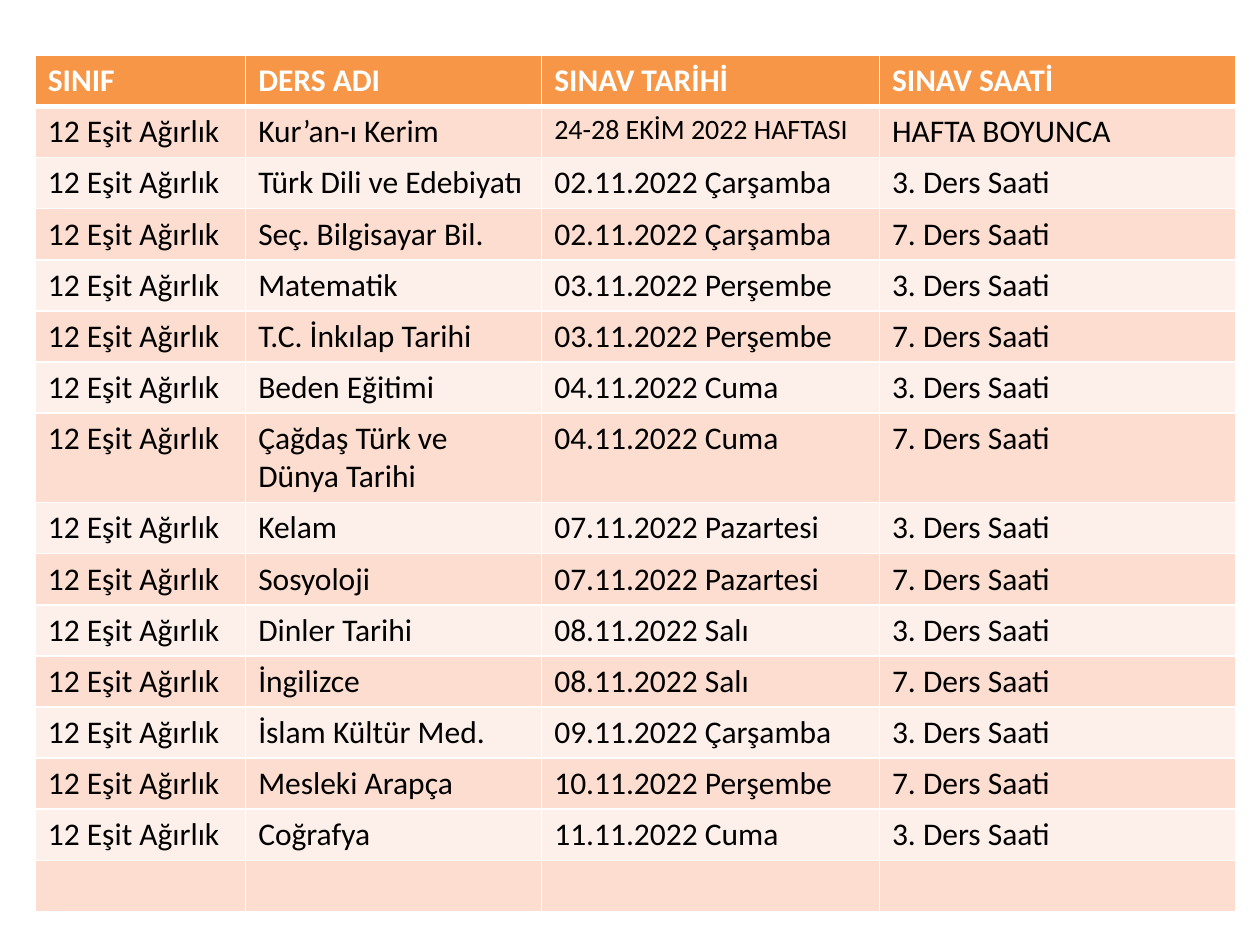
from dataclasses import dataclass
from itertools import cycle

from lxml.etree import SubElement
from pptx import Presentation
from pptx.dml.color import RGBColor
from pptx.oxml.ns import qn
from pptx.util import Inches, Pt


@dataclass(frozen=True)
class Theme:
    font: str = "Calibri"
    text_size: float = 18
    small_size: float = 16
    text: str = "000000"
    header_text: str = "FFFFFF"
    header_fill: str = "F79646"
    band_fills: tuple = ("FCDDCF", "FDEFE9")
    border: str = "FFFFFF"
    border_width: float = 1
    header_rule_width: float = 3
    row_height: float = 29.2


HEADERS = ("SINIF", "DERS ADI", "SINAV TARİHİ", "SINAV SAATİ")
CLASS_NAME = "12 Eşit Ağırlık"
WEEK_LONG_EXAM = ("Kur’an-ı Kerim", "24-28 EKİM 2022 HAFTASI", "HAFTA BOYUNCA")
EXAMS = (
    ("Türk Dili ve Edebiyatı", "02.11.2022 Çarşamba"),
    ("Seç. Bilgisayar Bil.", "02.11.2022 Çarşamba"),
    ("Matematik", "03.11.2022 Perşembe"),
    ("T.C. İnkılap Tarihi", "03.11.2022 Perşembe"),
    ("Beden Eğitimi", "04.11.2022 Cuma"),
    ("Çağdaş Türk ve Dünya Tarihi", "04.11.2022 Cuma"),
    ("Kelam", "07.11.2022 Pazartesi"),
    ("Sosyoloji", "07.11.2022 Pazartesi"),
    ("Dinler Tarihi", "08.11.2022 Salı"),
    ("İngilizce", "08.11.2022 Salı"),
    ("İslam Kültür Med.", "09.11.2022 Çarşamba"),
    ("Mesleki Arapça", "10.11.2022 Perşembe"),
    ("Coğrafya", "11.11.2022 Cuma"),
)
LESSONS = ("3. Ders Saati", "7. Ders Saati")
COLUMN_WIDTHS = (1.67, 2.35, 2.68, 2.83)


def schedule_rows():
    """Return all table rows; exams alternate between the two lessons."""
    exam_rows = [(CLASS_NAME, *exam, lesson) for exam, lesson in zip(EXAMS, cycle(LESSONS))]
    return [HEADERS, (CLASS_NAME, *WEEK_LONG_EXAM), *exam_rows, ("",) * len(HEADERS)]


class SlideBuilder:
    """Holds the theme and the slide being filled."""

    def __init__(self, slide, theme):
        self.slide = slide
        self.theme = theme

    def add_table(self, left, top, column_widths, rows):
        theme = self.theme
        frame = self.slide.shapes.add_table(
            len(rows), len(column_widths), Inches(left), Inches(top),
            Inches(sum(column_widths)), Pt(theme.row_height) * len(rows))
        table = frame.table
        for column, width in zip(table.columns, column_widths):
            column.width = Inches(width)
        for row_index, (row, values) in enumerate(zip(table.rows, rows)):
            row.height = Pt(theme.row_height)
            for cell, value in zip(row.cells, values):
                self.format_cell(cell, value, row_index)

    def format_cell(self, cell, value, row_index):
        theme = self.theme
        is_header = row_index == 0
        self.add_borders(cell, row_index)
        fill = theme.header_fill if is_header else theme.band_fills[(row_index - 1) % 2]
        cell.fill.solid()
        cell.fill.fore_color.rgb = RGBColor.from_string(fill)
        cell.text_frame.text = value
        is_small = value == WEEK_LONG_EXAM[1]
        for run in cell.text_frame.paragraphs[0].runs:
            run.font.name = theme.font
            run.font.size = Pt(theme.small_size if is_small else theme.text_size)
            run.font.bold = is_header
            run.font.color.rgb = RGBColor.from_string(
                theme.header_text if is_header else theme.text)

    def add_borders(self, cell, row_index):
        """Draw thin borders, with a thicker rule between header and body."""
        theme = self.theme
        properties = cell._tc.get_or_add_tcPr()
        thick_side = {0: "lnB", 1: "lnT"}.get(row_index)
        for side in ("lnL", "lnR", "lnT", "lnB"):
            width = theme.header_rule_width if side == thick_side else theme.border_width
            line = SubElement(properties, qn(f"a:{side}"), w=str(Pt(width)))
            solid_fill = SubElement(line, qn("a:solidFill"))
            SubElement(solid_fill, qn("a:srgbClr"), val=theme.border)


def main():
    presentation = Presentation()
    presentation.slide_width = Inches(10)
    presentation.slide_height = Inches(7.5)
    blank_layout = presentation.slide_layouts[6]
    builder = SlideBuilder(presentation.slides.add_slide(blank_layout), Theme())
    builder.add_table(0.28, 0.44, COLUMN_WIDTHS, schedule_rows())
    presentation.save("out.pptx")


if __name__ == "__main__":
    main()
